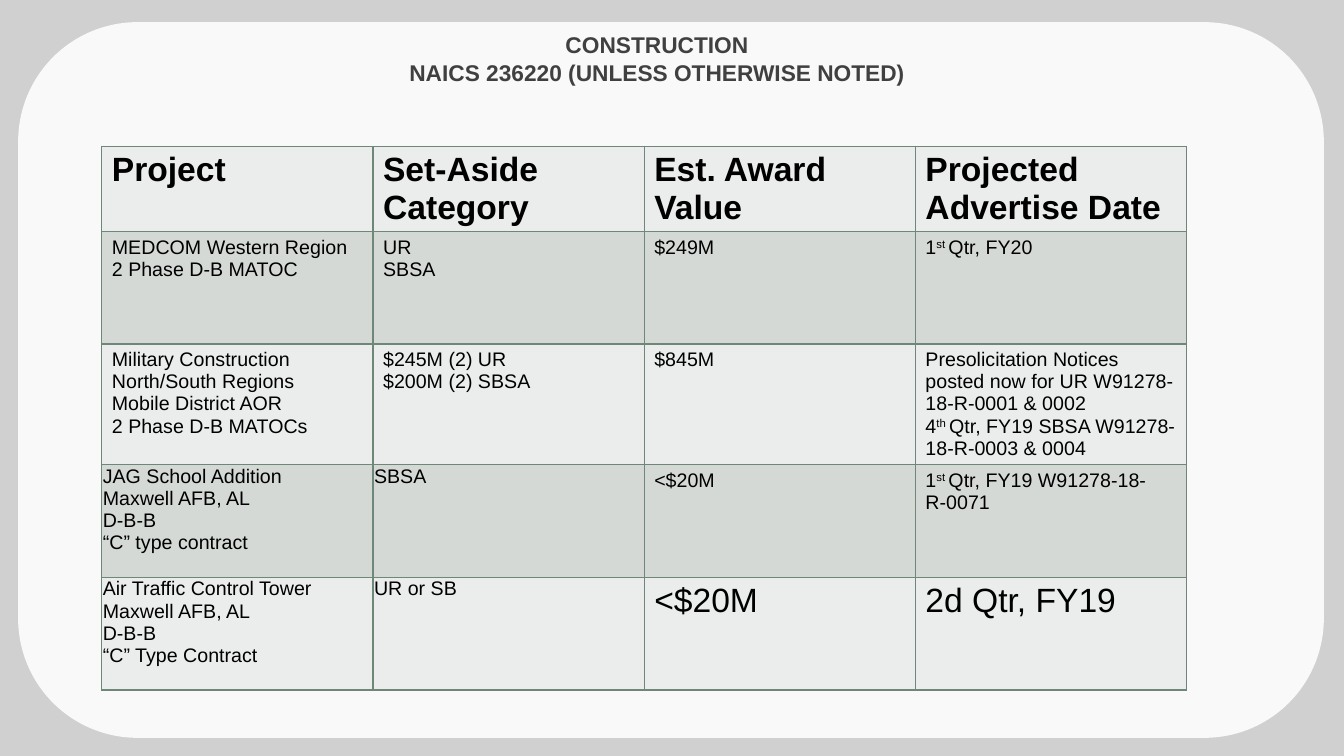
"""Build the construction forecast slide with its project table."""
import pptx
import pptx.dml.color
import pptx.enum.shapes
import pptx.enum.text
import pptx.oxml
import pptx.oxml.ns
import pptx.util

inch = pptx.util.Inches
WIDE, HIGH = 13.33, 7.5
COL, HEAD, ROW = 2.69, 0.71, 1.12
EDGE = "6E8778"
BANDS = ["EBEDEC", "D5D9D6"]


def paint(item, color):
    item.solid()
    item.fore_color.rgb = pptx.dml.color.RGBColor.from_string(color)


def write(para, text, size, bold, color):
    for i, part in enumerate(text.split("^")):
        run = para.add_run()
        run.text = part
        font = run.font
        font.name = "Arial"
        font.size = pptx.util.Pt(size)
        font.bold = bold
        paint(font.fill, color)
        if i % 2:
            font._element.set("baseline", "30000")


deck = pptx.Presentation()
deck.slide_width, deck.slide_height = inch(WIDE), inch(HIGH)
slide = deck.slides.add_slide(deck.slide_layouts[5])
paint(slide.background.fill, "D0D0D0")

panel = slide.shapes.add_shape(
    pptx.enum.shapes.MSO_SHAPE.ROUNDED_RECTANGLE,
    inch(0.18), inch(0.22), inch(12.95), inch(7.1))
panel.shadow.inherit = False
paint(panel.fill, "F9F9F9")
panel.line.fill.background()
slide.shapes._spTree.insert(2, panel._element)

title = slide.shapes.title
title.left, title.top = inch(1.5), inch(0.31)
title.width, title.height = inch(10.03), inch(0.77)
frame = title.text_frame
frame.word_wrap = True
frame.auto_size = pptx.enum.text.MSO_AUTO_SIZE.NONE
frame.vertical_anchor = pptx.enum.text.MSO_ANCHOR.TOP
frame.margin_top = frame.margin_bottom = 0
para = frame.paragraphs[0]
para.alignment = pptx.enum.text.PP_ALIGN.CENTER
write(para, "CONSTRUCTION", 16.2, True, "404040")
para.add_line_break()
write(para, "NAICS 236220 (UNLESS OTHERWISE NOTED)", 16.2, True, "404040")

rows = [
    ["Project", "Set-Aside Category", "Est. Award Value",
     "Projected Advertise Date"],
    ["MEDCOM Western Region\n2 Phase D-B MATOC", "UR\nSBSA", "$249M",
     "1^st ^Qtr, FY20"],
    ["Military Construction North/South Regions\nMobile District AOR\n"
     "2 Phase D-B MATOCs", "$245M (2) UR\n$200M (2) SBSA", "$845M",
     "Presolicitation Notices posted now for UR W91278-18-R-0001 & 0002\n"
     "4^th ^Qtr, FY19 SBSA W91278-18-R-0003 & 0004"],
    ["JAG School Addition\nMaxwell AFB, AL\nD-B-B\n“C” type contract",
     "SBSA", "<$20M", "1^st ^Qtr, FY19 W91278-18-R-0071"],
    ["Air Traffic Control Tower Maxwell AFB, AL\nD-B-B\n“C” Type Contract",
     "UR or SB", "<$20M", "2d Qtr, FY19"],
]
count, last = len(rows[0]), len(rows) - 1
table = slide.shapes.add_table(
    len(rows), count, inch(1.01), inch(1.45),
    inch(COL * count), inch(HEAD + ROW * last)).table
for col in table.columns:
    col.width = inch(COL)

for r, row in enumerate(rows):
    table.rows[r].height = inch(ROW if r else HEAD)
    for c, text in enumerate(row):
        cell = table.cell(r, c)
        if r >= 3 and c < 2:
            cell.margin_left = cell.margin_right = inch(0.01)
            cell.margin_top, cell.margin_bottom = inch(0.01), 0
        props = cell._tc.get_or_add_tcPr()
        for side in "LRTB":
            props.append(pptx.oxml.parse_xml(
                f'<a:ln{side} {pptx.oxml.ns.nsdecls("a")} w="12700">'
                f'<a:solidFill><a:srgbClr val="{EDGE}"/></a:solidFill>'
                f'</a:ln{side}>'))
        paint(cell.fill, BANDS[r % 2])
        size = 24 if r == 0 or (r == last and c >= 2) else 14
        for i, line in enumerate(text.split("\n")):
            frame = cell.text_frame
            para = frame.add_paragraph() if i else frame.paragraphs[0]
            write(para, line, size, r == 0, "000000")

deck.save("out.pptx")
